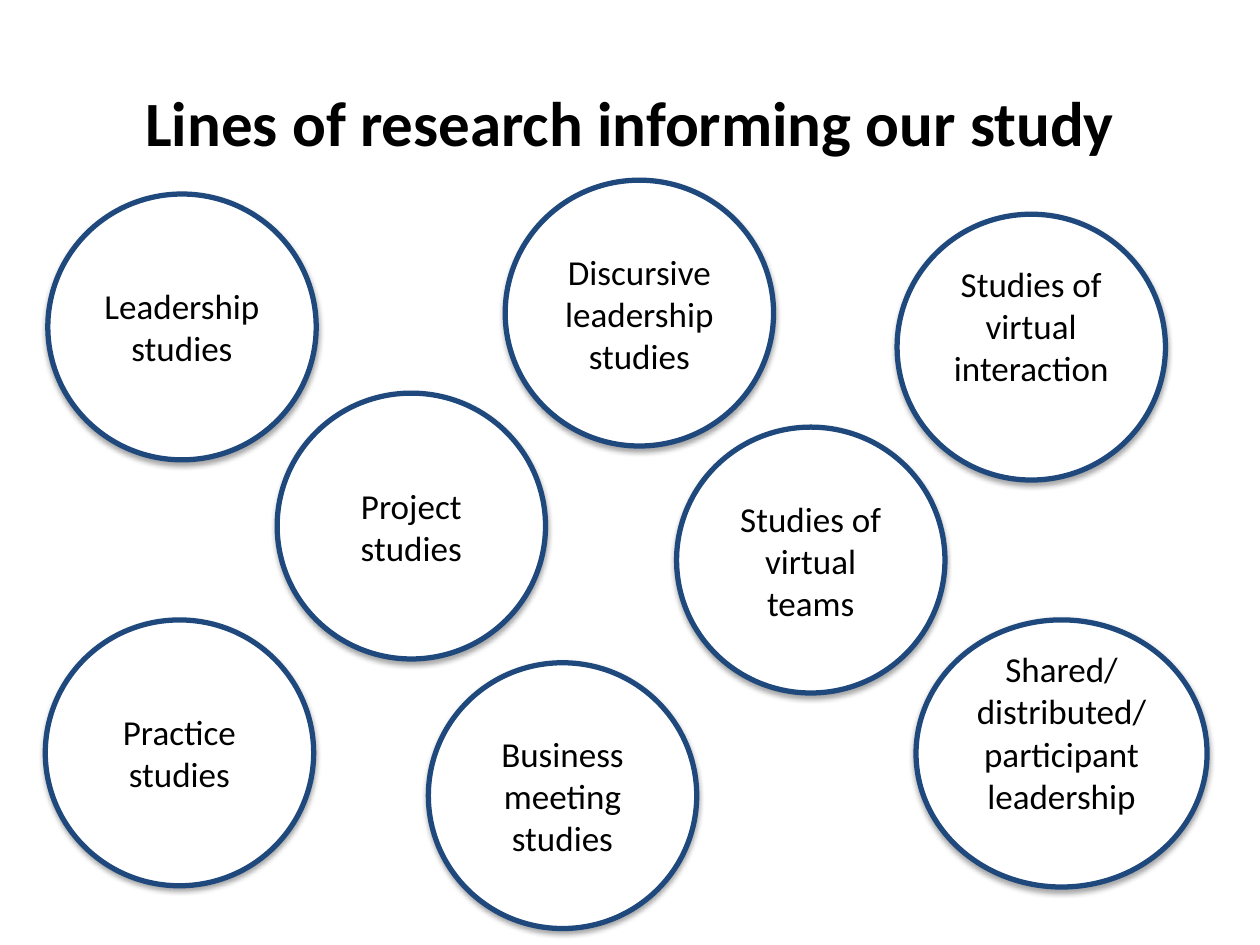
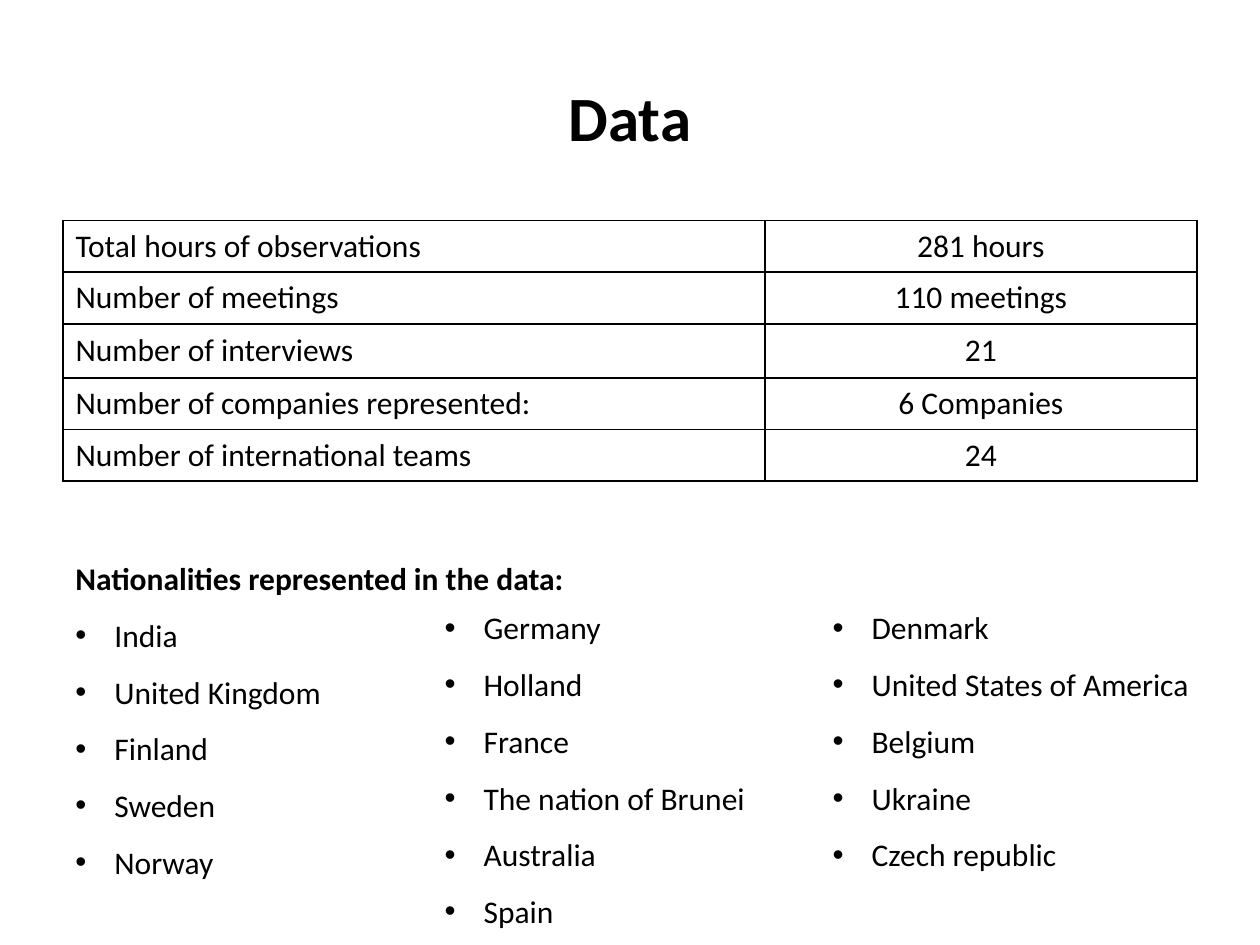
from lxml import etree
from pptx import Presentation
from pptx.dml.color import RGBColor
from pptx.enum import shapes, text
from pptx.oxml import parse_xml
from pptx.oxml.ns import nsdecls, qn
from pptx.util import Inches, Pt

COLORS = {"text": "000000", "circle_fill": "FFFFFF", "circle_line": "1F497D", "border": "000000"}
FONT = "Calibri"
TITLE_ONLY = 5


def add_run(paragraph, words, size, bold=False):
    run = paragraph.add_run()
    run.text = words
    run.font.name = FONT
    run.font.size = Pt(size)
    run.font.bold = bold
    run.font.color.rgb = RGBColor.from_string(COLORS["text"])


def add_titled_slide(presentation, words, top):
    slide = presentation.slides.add_slide(presentation.slide_layouts[TITLE_ONLY])
    title = slide.shapes.title
    title.left, title.top, title.width, title.height = Inches(0.5), Inches(top), Inches(9), Inches(0.99)
    title.text_frame.vertical_anchor = text.MSO_ANCHOR.MIDDLE
    paragraph = title.text_frame.paragraphs[0]
    paragraph.alignment = text.PP_ALIGN.CENTER
    add_run(paragraph, words, 36, bold=True)
    return slide


presentation = Presentation()
presentation.slide_width, presentation.slide_height = Inches(10), Inches(7.5)

# Slide 1: research lines as circles (label, left, top, width, height, bottom inset)
slide = add_titled_slide(presentation, "Lines of research informing our study", 0.47)
research_lines = [
    ("Leadership studies", 0.38, 1.54, 2.13, 2.11, 0.05),
    ("Discursive leadership studies", 4.01, 1.43, 2.13, 2.11, 0.05),
    ("Business meeting studies", 3.4, 5.26, 2.13, 2.11, 0.05),
    ("Practice studies", 0.36, 4.92, 2.13, 2.11, 0.05),
    ("Shared/ distributed/ participant leadership", 7.27, 4.92, 2.31, 2.12, 0.39),
    ("Studies of virtual teams", 5.37, 3.39, 2.13, 2.11, 0.05),
    ("Project studies", 2.2, 3.12, 2.13, 2.11, 0.05),
    ("Studies of virtual interaction", 7.12, 1.7, 2.13, 2.11, 0.39),
]
for label, left, top, width, height, bottom_inset in research_lines:
    circle = slide.shapes.add_shape(
        shapes.MSO_SHAPE.OVAL, Inches(left), Inches(top), Inches(width), Inches(height))
    circle.fill.solid()
    circle.fill.fore_color.rgb = RGBColor.from_string(COLORS["circle_fill"])
    circle.line.color.rgb = RGBColor.from_string(COLORS["circle_line"])
    circle.line.width = Pt(3)
    circle.shadow.inherit = False
    effects = circle._element.spPr.find(qn("a:effectLst"))
    effects.append(parse_xml(
        f'<a:outerShdw {nsdecls("a")} blurRad="{Pt(3.1)}" dist="{Pt(1.8)}" dir="5400000" rotWithShape="0">'
        '<a:srgbClr val="000000"><a:alpha val="35000"/></a:srgbClr></a:outerShdw>'))
    frame = circle.text_frame
    frame.word_wrap = True
    frame.vertical_anchor = text.MSO_ANCHOR.MIDDLE
    frame.margin_bottom = Inches(bottom_inset)
    paragraph = frame.paragraphs[0]
    paragraph.alignment = text.PP_ALIGN.CENTER
    add_run(paragraph, label, 20)

# Slide 2: data table and nationalities
slide = add_titled_slide(presentation, "Data", 0.43)
data_rows = [
    ("Total hours of observations", "281 hours", 0.41),
    ("Number of meetings", "110 meetings", 0.41),
    ("Number of interviews", "21", 0.43),
    ("Number of companies represented:", "6 Companies", 0.41),
    ("Number of international teams", "24", 0.41),
]
table = slide.shapes.add_table(
    len(data_rows), 2, Inches(0.5), Inches(1.75), Inches(9), Inches(2.05)).table
table.first_row = table.horz_banding = False
table.columns[0].width, table.columns[1].width = Inches(5.57), Inches(3.43)
alignments = (text.PP_ALIGN.LEFT, text.PP_ALIGN.CENTER)
for row, (*values, height) in zip(table.rows, data_rows):
    row.height = Inches(height)
    for cell, words, alignment in zip(row.cells, values, alignments):
        cell.vertical_anchor = text.MSO_ANCHOR.MIDDLE
        paragraph = cell.text_frame.paragraphs[0]
        paragraph.alignment = alignment
        add_run(paragraph, words, 18)
        properties = cell._tc.get_or_add_tcPr()
        for side in ("lnL", "lnR", "lnT", "lnB"):
            properties.append(parse_xml(
                f'<a:{side} {nsdecls("a")} w="{Pt(1)}"><a:solidFill>'
                f'<a:srgbClr val="{COLORS["border"]}"/></a:solidFill></a:{side}>'))
        cell.fill.background()

# Each column: left, top, width, height, heading, countries
nationality_columns = [
    (0.5, 4.24, 4.17, 3.23, "Nationalities represented in the data:",
     ["India", "United Kingdom", "Finland", "Sweden", "Norway"]),
    (3.43, 4.63, 2.88, 2.78, None,
     ["Germany", "Holland", "France", "The nation of Brunei", "Australia", "Spain"]),
    (6.51, 4.63, 4.23, 2.78, None,
     ["Denmark", "United States of America", "Belgium", "Ukraine", "Czech republic"]),
]
for left, top, width, height, heading, countries in nationality_columns:
    box = slide.shapes.add_textbox(Inches(left), Inches(top), Inches(width), Inches(height))
    frame = box.text_frame
    frame.word_wrap = True
    frame.auto_size = text.MSO_AUTO_SIZE.SHAPE_TO_FIT_TEXT
    lines = [heading] + countries if heading else countries
    for index, line in enumerate(lines):
        paragraph = frame.add_paragraph() if index else frame.paragraphs[0]
        paragraph.line_spacing = 1.5
        add_run(paragraph, line, 18, bold=line == heading)
        if line != heading:
            properties = paragraph._p.get_or_add_pPr()
            properties.set("marL", str(Inches(0.31)))
            properties.set("indent", str(-Inches(0.31)))
            etree.SubElement(properties, qn("a:buFont"), typeface="Arial")
            etree.SubElement(properties, qn("a:buChar"), char="•")

presentation.save("out.pptx")
